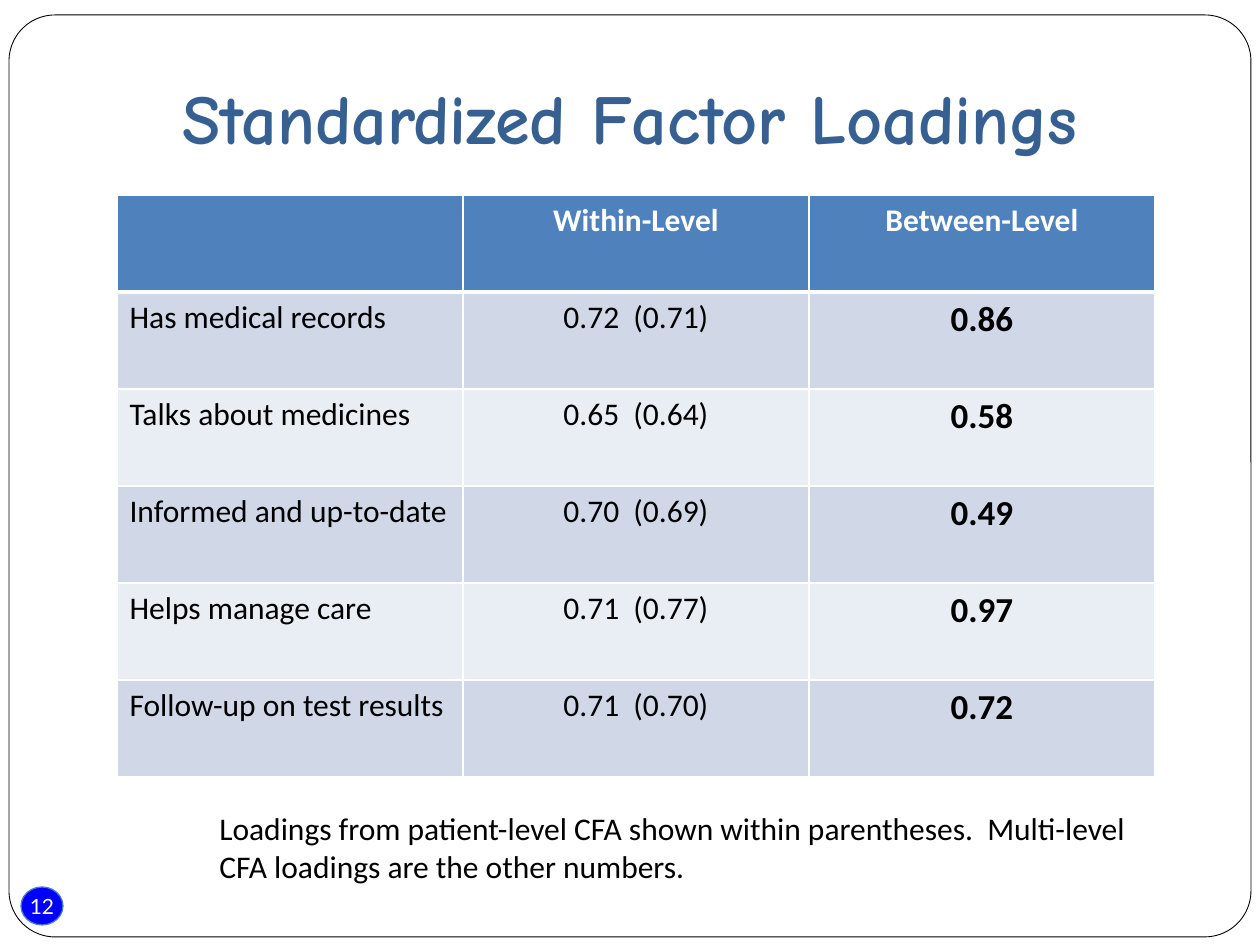
import pptx
import pptx.dml.color
import pptx.enum.shapes
import pptx.enum.text
import pptx.oxml
import pptx.oxml.ns
import pptx.util

PX = 914400 / 126
ALIGN = pptx.enum.text.PP_ALIGN
SHAPE = pptx.enum.shapes.MSO_SHAPE
MIDDLE = pptx.enum.text.MSO_ANCHOR.MIDDLE


def px(*values):
    """Turn pixel lengths into EMU."""
    return [round(v * PX) for v in values]


def color(value):
    return pptx.dml.color.RGBColor.from_string(value)


prs = pptx.Presentation()
prs.slide_width, prs.slide_height = px(1260, 945)
s = prs.slides.add_slide(prs.slide_layouts[6])

# Page number and frame
badge = s.shapes.add_shape(SHAPE.OVAL, *px(21, 887, 42, 38))
badge.shadow.inherit = False
badge.fill.solid()
badge.fill.fore_color.rgb = color("0000FF")
badge.line.color.rgb = color("4B7EBC")
badge.line.width = pptx.util.Pt(0.75)

frame = s.shapes.add_shape(SHAPE.ROUNDED_RECTANGLE, *px(9, 15, 1242, 922))
frame.shadow.inherit = False
frame.adjustments[0] = 0.05
frame.fill.background()
frame.line.color.rgb = color("000000")
frame.line.width = pptx.util.Pt(0.5)

tf = badge.text_frame
tf.margin_left = tf.margin_right = tf.margin_top = tf.margin_bottom = 0
tf.vertical_anchor = MIDDLE
tf.word_wrap = False

title = s.shapes.add_textbox(*px(63, 38, 1134, 157))
title.text_frame.word_wrap = True
title.text_frame.vertical_anchor = MIDDLE

for sp, text, size, font, hue, bold in [
    (badge, "12", 12, "Lato", "FFFFFF", False),
    (title, "Standardized Factor Loadings", 40, "Comic Neue", "376092", True),
]:
    p = sp.text_frame.paragraphs[0]
    p.alignment = ALIGN.CENTER
    r = p.add_run()
    r.text = text
    r.font.size = pptx.util.Pt(size)
    r.font.name = font
    r.font.bold = bold
    r.font.color.rgb = color(hue)

# Loadings table
rows = [
    ("", "Within-Level", "Between-Level"),
    ("Has medical records", "0.72  (0.71)", "0.86"),
    ("Talks about medicines", "0.65  (0.64)", "0.58"),
    ("Informed and up-to-date", "0.70  (0.69)", "0.49"),
    ("Helps manage care", "0.71  (0.77)", "0.97"),
    ("Follow-up on test results", "0.71  (0.70)", "0.72"),
]
table = s.shapes.add_table(len(rows), 3, *px(117, 195, 1038, 582)).table
for i, row in enumerate(rows):
    table.rows[i].height = px(97)[0]
    for j, text in enumerate(row):
        cell = table.cell(i, j)
        header = i == 0
        widths = {"L": 1, "R": 1, "T": 3 if i == 1 else 1, "B": 3 if header else 1}
        for side, width in widths.items():
            cell._tc.get_or_add_tcPr().append(pptx.oxml.parse_xml(
                f'<a:ln{side} {pptx.oxml.ns.nsdecls("a")} w="{width * 12700}">'
                f'<a:solidFill><a:srgbClr val="FFFFFF"/></a:solidFill></a:ln{side}>'))
        cell.fill.solid()
        cell.fill.fore_color.rgb = color(
            "4F81BD" if header else "D0D8E8" if i % 2 else "E9EDF4")
        if not text:
            continue
        p = cell.text_frame.paragraphs[0]
        p.alignment = ALIGN.CENTER if j else ALIGN.LEFT
        r = p.add_run()
        r.text = text
        r.font.name = "Calibri"
        r.font.size = pptx.util.Pt(20 if j == 2 and not header else 18)
        r.font.bold = header or j == 2
        r.font.color.rgb = color("FFFFFF" if header else "000000")

# Note below the table
note = s.shapes.add_textbox(*px(207, 803, 944, 89))
tf = note.text_frame
tf.word_wrap = False
for i, text in enumerate([
    "Loadings from patient-level CFA shown within parentheses.  Multi-level",
    "CFA loadings are the other numbers.",
]):
    p = tf.add_paragraph() if i else tf.paragraphs[0]
    p.alignment = ALIGN.LEFT
    r = p.add_run()
    r.text = text
    r.font.name = "Calibri"
    r.font.size = pptx.util.Pt(18)
    r.font.color.rgb = color("000000")

prs.save("out.pptx")
